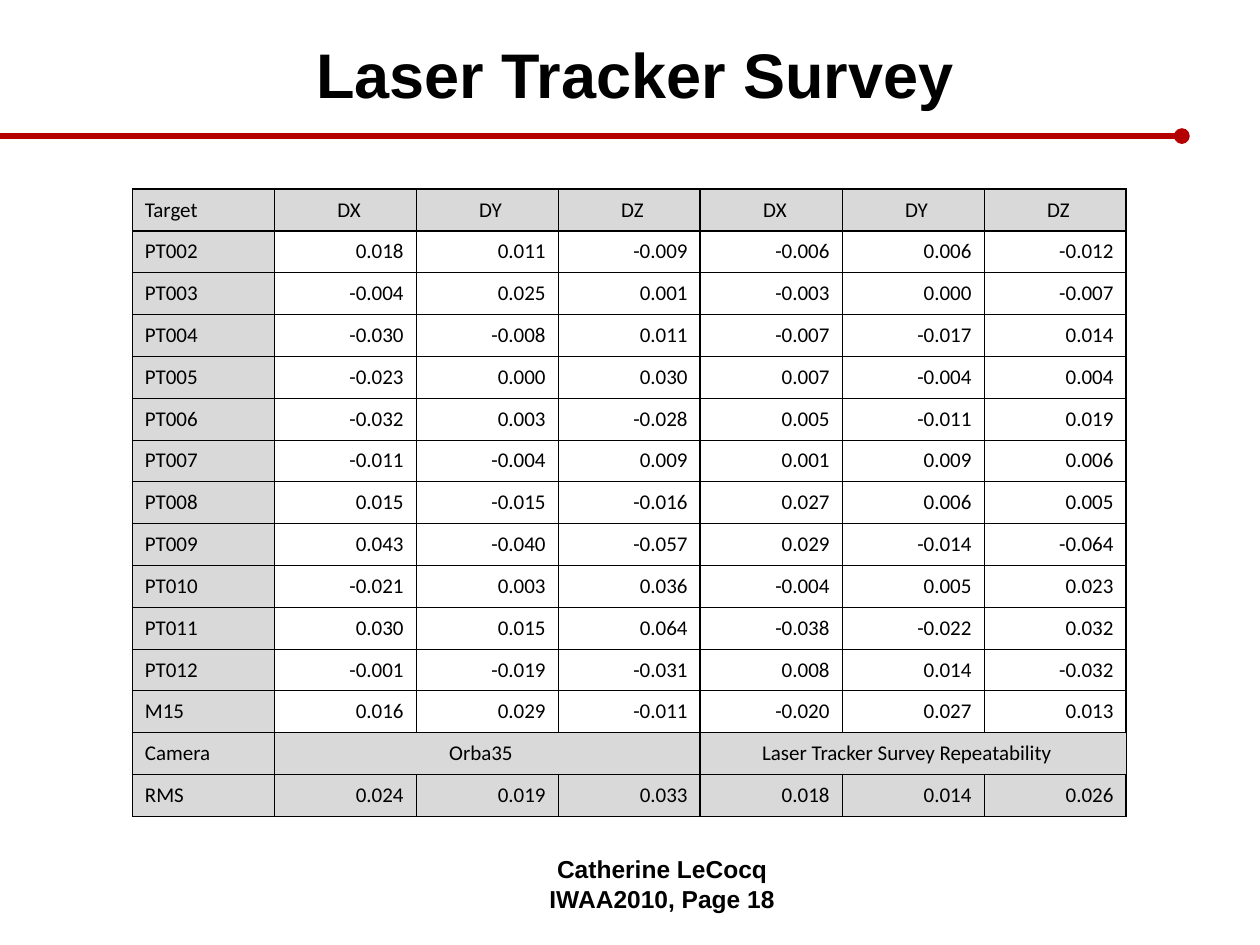
import pptx
import pptx.dml.color
import pptx.enum.shapes
import pptx.enum.text
import pptx.oxml.ns
import pptx.util
from lxml import etree

Inches = pptx.util.Inches
Pt = pptx.util.Pt
ALIGN = pptx.enum.text.PP_ALIGN
MIDDLE = pptx.enum.text.MSO_ANCHOR.MIDDLE
BLACK = pptx.dml.color.RGBColor(0x00, 0x00, 0x00)
RED = pptx.dml.color.RGBColor(0xB4, 0x00, 0x00)
GREY = pptx.dml.color.RGBColor(0xD9, 0xD9, 0xD9)


def apply_format(target, values):
    for name, value in values.items():
        setattr(target, name, value)


def add_xml(parent, tag, **attributes):
    return etree.SubElement(parent, pptx.oxml.ns.qn(tag), attributes)


presentation = pptx.Presentation()
presentation.slide_width = Inches(10)
presentation.slide_height = Inches(7.5)
slide = presentation.slides.add_slide(presentation.slide_layouts[5])

rule = slide.shapes.add_connector(
    pptx.enum.shapes.MSO_CONNECTOR.STRAIGHT,
    Inches(0), Inches(1.08), Inches(9.38), Inches(1.08))
rule.line.color.rgb = RED
rule.line.width = Pt(3)
add_xml(rule.line._get_or_add_ln(), "a:tailEnd", type="oval")
add_xml(rule._element.spPr, "a:effectLst")

title = slide.shapes.title
apply_format(title, {"left": Inches(0.33), "top": Inches(0.17),
                     "width": Inches(9.42), "height": Inches(0.83)})
author = slide.shapes.add_textbox(Inches(3.1), Inches(6.73), Inches(4.31), Inches(0.52))

headings = [
    (title, ["Laser Tracker Survey"], 36, MIDDLE),
    (author, ["Catherine LeCocq", "IWAA2010, Page 18"], 14, pptx.enum.text.MSO_ANCHOR.TOP),
]
for box, lines, size, anchor in headings:
    frame = box.text_frame
    apply_format(frame, {"text": "\n".join(lines), "word_wrap": True, "vertical_anchor": anchor,
                         "auto_size": pptx.enum.text.MSO_AUTO_SIZE.NONE})
    for paragraph in frame.paragraphs:
        paragraph.alignment = ALIGN.CENTER
        apply_format(paragraph.font, {"name": "Arial", "size": Pt(size), "bold": True})
        paragraph.font.color.rgb = BLACK

survey = [
    ["Target", "DX", "DY", "DZ", "DX", "DY", "DZ"],
    ["PT002", "0.018", "0.011", "-0.009", "-0.006", "0.006", "-0.012"],
    ["PT003", "-0.004", "0.025", "0.001", "-0.003", "0.000", "-0.007"],
    ["PT004", "-0.030", "-0.008", "0.011", "-0.007", "-0.017", "0.014"],
    ["PT005", "-0.023", "0.000", "0.030", "0.007", "-0.004", "0.004"],
    ["PT006", "-0.032", "0.003", "-0.028", "0.005", "-0.011", "0.019"],
    ["PT007", "-0.011", "-0.004", "0.009", "0.001", "0.009", "0.006"],
    ["PT008", "0.015", "-0.015", "-0.016", "0.027", "0.006", "0.005"],
    ["PT009", "0.043", "-0.040", "-0.057", "0.029", "-0.014", "-0.064"],
    ["PT010", "-0.021", "0.003", "0.036", "-0.004", "0.005", "0.023"],
    ["PT011", "0.030", "0.015", "0.064", "-0.038", "-0.022", "0.032"],
    ["PT012", "-0.001", "-0.019", "-0.031", "0.008", "0.014", "-0.032"],
    ["M15", "0.016", "0.029", "-0.011", "-0.020", "0.027", "0.013"],
    ["Camera", "Orba35", "", "", "Laser Tracker Survey Repeatability", "", ""],
    ["RMS", "0.024", "0.019", "0.033", "0.018", "0.014", "0.026"],
]
camera_row, rms_row = 13, 14
thick_columns = {0, 1, 4, 7}
thick_rows = {0, 1, 13, 14, 15}

table = slide.shapes.add_table(len(survey), len(survey[0]), Inches(1.05), Inches(1.5),
                               Inches(7.89), Inches(4.98)).table
apply_format(table, {"first_row": False, "horz_banding": False})
for first in (1, 4):
    table.cell(camera_row, first).merge(table.cell(camera_row, first + 2))

for r, values in enumerate(survey):
    for c, value in enumerate(values):
        if c == 0:
            left, right, alignment = 0.1, 0, ALIGN.LEFT
        elif r == 0:
            left, right, alignment = 0.5, 0, ALIGN.LEFT
        elif r == camera_row:
            left, right, alignment = 0, 0.1, ALIGN.CENTER
        else:
            left, right, alignment = 0, 0.1, ALIGN.RIGHT
        cell = table.cell(r, c)
        apply_format(cell, {"text": value, "vertical_anchor": MIDDLE,
                            "margin_left": Inches(left), "margin_right": Inches(right),
                            "margin_top": 0, "margin_bottom": 0})
        paragraph = cell.text_frame.paragraphs[0]
        paragraph.alignment = alignment
        apply_format(paragraph.font, {"name": "Calibri", "size": Pt(12), "bold": False})
        paragraph.font.color.rgb = BLACK

        sides = {"a:lnL": c in thick_columns, "a:lnR": c + 1 in thick_columns,
                 "a:lnT": r in thick_rows, "a:lnB": r + 1 in thick_rows}
        for side, thick in sides.items():
            border = add_xml(cell._tc.get_or_add_tcPr(), side, w=str(Pt(1 if thick else 0.5)))
            add_xml(add_xml(border, "a:solidFill"), "a:srgbClr", val=str(BLACK))

        if c == 0 or r in (0, camera_row, rms_row):
            cell.fill.solid()
            cell.fill.fore_color.rgb = GREY
        else:
            cell.fill.background()

presentation.save("out.pptx")
